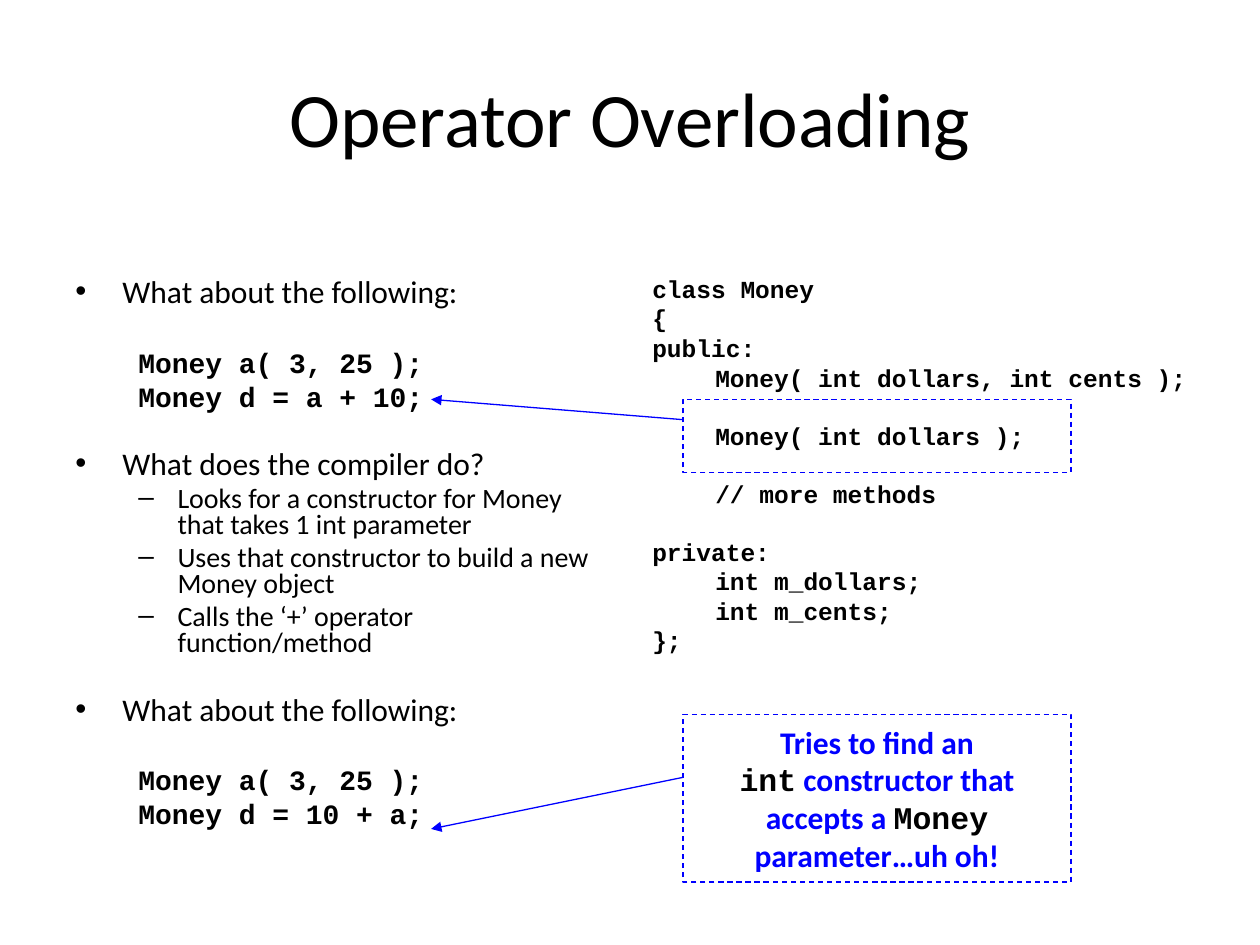
from dataclasses import dataclass

from lxml import etree
from pptx import Presentation
from pptx import util as u
from pptx.dml.color import RGBColor
from pptx.enum import dml, shapes, text
from pptx.oxml import ns


@dataclass(frozen=True)
class Theme:
    ink: RGBColor = RGBColor(0, 0, 0)
    accent: RGBColor = RGBColor(0, 0, 255)
    prose: str = "Calibri"
    code: str = "Courier New"
    title: int = 44
    topic: int = 18
    detail: int = 16
    listing: int = 14
    rule: float = 0.75


@dataclass(frozen=True)
class LineStyle:
    font: str
    size: int
    margin: float
    hanging: float
    before: float
    gap: float
    bullet: str = ""
    bold: bool = False


THEME = Theme()
TOPIC = LineStyle(THEME.prose, THEME.topic, 0.95, 0.95, 4, 22, "•")
DETAIL = LineStyle(THEME.prose, THEME.detail, 2.06, 0.79, 3, 20, "–")
EXAMPLE = LineStyle(THEME.code, THEME.detail, 2.06, 0.79, 4, 24, bold=True)
OUTER = LineStyle(THEME.code, THEME.listing, 0.95, 0.95, 3.5, 19.7, bold=True)
MEMBER = LineStyle(THEME.code, THEME.listing, 2.06, 0.79, 3.5, 19.7, bold=True)

DISCUSSION = [
    [(TOPIC, "What about the following:")],
    [(EXAMPLE, "Money a( 3, 25 );"), (EXAMPLE, "Money d = a + 10;")],
    [(TOPIC, "What does the compiler do?"),
     (DETAIL, "Looks for a constructor for Money that takes 1 int parameter"),
     (DETAIL, "Uses that constructor to build a new Money object"),
     (DETAIL, "Calls the ‘+’ operator function/method")],
    [(TOPIC, "What about the following:")],
    [(EXAMPLE, "Money a( 3, 25 );"), (EXAMPLE, "Money d = 10 + a;")],
]
MONEY_CLASS = [
    [(OUTER, "class Money"), (OUTER, "{"), (OUTER, "public:"),
     (MEMBER, "Money( int dollars, int cents );")],
    [(MEMBER, "Money( int dollars );")],
    [(MEMBER, "// more methods")],
    [(OUTER, "private:"), (MEMBER, "int m_dollars;"),
     (MEMBER, "int m_cents;"), (OUTER, "};")],
]
WARNING = [
    [("Tries to find an", False)],
    [("int", True), (" constructor that", False)],
    [("accepts a ", False), ("Money", True)],
    [("parameter…uh oh!", False)],
]


def format_run(run, font, size, color, bold=False):
    run.font.name = font
    run.font.size = u.Pt(size)
    run.font.color.rgb = color
    run.font.bold = bold


def add_frame(slide, box):
    frame = slide.shapes.add_textbox(*map(u.Cm, box)).text_frame
    frame.word_wrap = True
    return frame


def add_title(slide, box, wording):
    frame = add_frame(slide, box)
    frame.vertical_anchor = text.MSO_ANCHOR.MIDDLE
    heading = frame.paragraphs[0]
    heading.text = wording
    heading.alignment = text.PP_ALIGN.CENTER
    format_run(heading.runs[0], THEME.prose, THEME.title, THEME.ink)


def set_indent(paragraph, style):
    properties = paragraph._p.get_or_add_pPr()
    properties.set("marL", str(u.Cm(style.margin)))
    properties.set("indent", str(-u.Cm(style.hanging)))
    if style.bullet:
        face = etree.SubElement(properties, ns.qn("a:buFont"))
        face.set("typeface", "Arial")
        mark = etree.SubElement(properties, ns.qn("a:buChar"))
        mark.set("char", style.bullet)
    else:
        etree.SubElement(properties, ns.qn("a:buNone"))


def add_outline(slide, box, groups):
    frame = add_frame(slide, box)
    for group_index, group in enumerate(groups):
        for line_index, (style, wording) in enumerate(group):
            first = group_index == line_index == 0
            line = frame.paragraphs[0] if first else frame.add_paragraph()
            line.text = wording
            line.line_spacing = 0.8
            spacing = style.before if line_index or first else style.gap
            line.space_before = u.Pt(spacing)
            set_indent(line, style)
            format_run(line.runs[0], style.font, style.size, THEME.ink, style.bold)


def add_dashed_box(slide, box):
    outline = slide.shapes.add_shape(shapes.MSO_SHAPE.RECTANGLE, *map(u.Cm, box))
    outline.shadow.inherit = False
    outline.fill.background()
    outline.line.color.rgb = THEME.accent
    outline.line.width = u.Pt(THEME.rule)
    outline.line.dash_style = dml.MSO_LINE.DASH
    return outline


def add_pointer(slide, box, drop, reach, rise):
    left, top = box[:2]
    ends = (left, top + drop, left - reach, top + drop + rise)
    pointer = slide.shapes.add_connector(
        shapes.MSO_CONNECTOR.STRAIGHT, *map(u.Cm, ends))
    pointer.line.color.rgb = THEME.accent
    pointer.line.width = u.Pt(THEME.rule)
    head = etree.SubElement(pointer.line._get_or_add_ln(), ns.qn("a:tailEnd"))
    head.set("type", "triangle")
    etree.SubElement(pointer._element.spPr, ns.qn("a:effectLst"))


def add_constructor_mark(slide, box):
    add_dashed_box(slide, box)
    add_pointer(slide, box, 0.41, 5.08, -0.41)


def add_warning(slide, box, lines):
    frame = add_dashed_box(slide, box).text_frame
    frame.word_wrap = False
    frame.vertical_anchor = text.MSO_ANCHOR.MIDDLE
    message = frame.paragraphs[0]
    message.alignment = text.PP_ALIGN.CENTER
    for index, pieces in enumerate(lines):
        if index:
            message.add_line_break()
        for wording, is_code in pieces:
            run = message.add_run()
            run.text = wording
            font = THEME.code if is_code else THEME.prose
            color = THEME.ink if is_code else THEME.accent
            format_run(run, font, THEME.topic, color, True)
    add_pointer(slide, box, 1.27, 5.08, 1.04)


def main():
    deck = Presentation()
    deck.slide_width, deck.slide_height = u.Cm(25.4), u.Cm(19.05)
    slide = deck.slides.add_slide(deck.slide_layouts[6])
    add_title(slide, (1.27, 0.76, 22.86, 3.18), "Operator Overloading")
    add_outline(slide, (1.27, 5.51, 11.23, 12.7), DISCUSSION)
    add_outline(slide, (12.9, 5.51, 12.07, 12.5), MONEY_CLASS)
    add_constructor_mark(slide, (13.77, 8.05, 7.82, 1.47))
    add_warning(slide, (13.77, 14.4, 7.82, 3.38), WARNING)
    deck.save("out.pptx")


if __name__ == "__main__":
    main()
